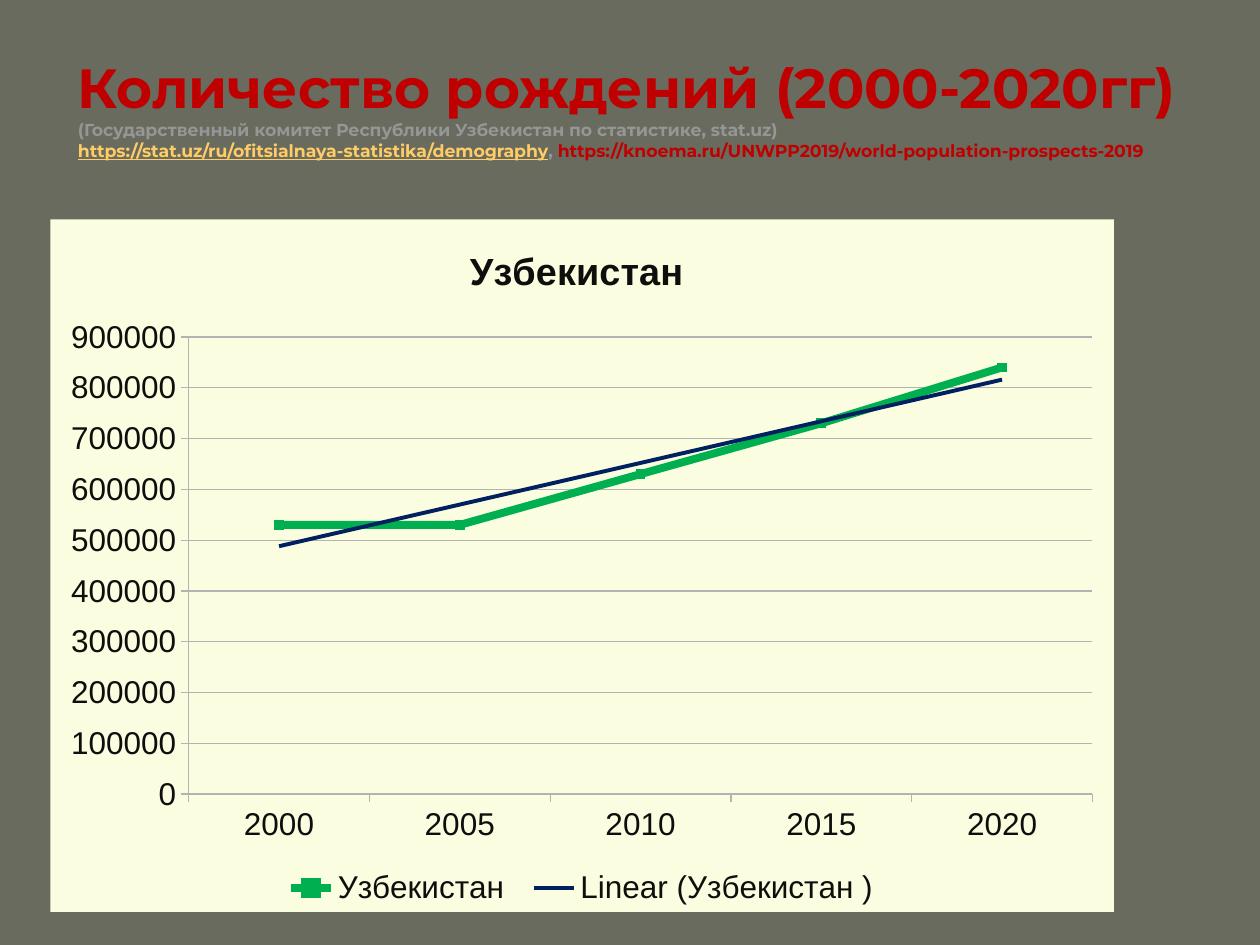
from lxml import etree
from pptx import Presentation, util as u
from pptx.chart.data import CategoryChartData
from pptx.dml.color import RGBColor
from pptx.enum import chart as ch, text
from pptx.oxml import parse_xml
from pptx.oxml.ns import nsdecls, qn

OLIVE = RGBColor(0x68, 0x6B, 0x5D)
CREAM = RGBColor(0xFA, 0xFD, 0xDF)
RED = RGBColor(0xC0, 0x00, 0x00)
GRAY = RGBColor(0x96, 0x96, 0x96)
GOLD = RGBColor(0xFF, 0xCC, 0x66)
INK = RGBColor(0x0E, 0x0E, 0x0C)
GREEN = RGBColor(0x00, 0xB0, 0x50)
NAVY = RGBColor(0x00, 0x20, 0x60)
GRID = RGBColor(0xB3, 0xB3, 0xB3)


def style(font, color, **values):
    for key, value in values.items():
        setattr(font, key, value)
    font.color.rgb = color


def fill_xml(color):
    return parse_xml(
        f'<c:spPr {nsdecls("c", "a")}><a:solidFill><a:srgbClr val="{color}"/></a:solidFill>'
        '<a:ln><a:noFill/></a:ln></c:spPr>')


deck = Presentation()
deck.slide_width, deck.slide_height = u.Inches(10), u.Inches(7.5)
W, H = deck.slide_width, deck.slide_height
slide = deck.slides.add_slide(deck.slide_layouts[6])
slide.background.fill.solid()
slide.background.fill.fore_color.rgb = OLIVE

heading = slide.shapes.add_textbox(
    int(W * 0.052), int(H * 0.024), int(W * 0.892), int(H * 0.196)).text_frame
heading.word_wrap = True
heading.vertical_anchor = text.MSO_ANCHOR.MIDDLE
heading.margin_bottom = u.Inches(0.18)
lines = [
    [("Количество рождений (2000-2020гг)", 31.5, RED, False)],
    [("(Государственный комитет Республики Узбекистан по статистике, stat.uz)", 9.9, GRAY, False)],
    [("https://stat.uz/ru/ofitsialnaya-statistika/demography", 9.9, GOLD, True),
     (", ", 9.9, GRAY, False),
     ("https://knoema.ru/UNWPP2019/world-population-prospects-2019", 9.9, RED, False)],
]
paragraph = heading.paragraphs[0]
for number, line in enumerate(lines):
    if number:
        paragraph.add_line_break()
    for words, size, color, underline in line:
        run = paragraph.add_run()
        run.text = words
        style(run.font, color, name="Montserrat", size=u.Pt(size), bold=True, underline=underline)

births = CategoryChartData()
births.categories = ["2000", "2005", "2010", "2015", "2020"]
births.add_series("Узбекистан ", [530000, 530000, 630000, 730000, 840000])
chart = slide.shapes.add_chart(
    ch.XL_CHART_TYPE.LINE_MARKERS, int(W * 0.04), int(H * 0.232),
    int(W * 0.844), int(H * 0.733), births).chart
style(chart.font, INK, name="Arial", size=u.Pt(18))

chart.has_title = True
country = chart.chart_title.text_frame
country.text = "Узбекистан "
style(country.paragraphs[0].runs[0].font, INK, name="Arial", size=u.Pt(21.6), bold=True)

chart.has_legend = True
chart.legend.position = ch.XL_LEGEND_POSITION.BOTTOM
chart.legend.include_in_layout = False
style(chart.legend.font, INK, name="Arial", size=u.Pt(18))

years, counts = chart.category_axis, chart.value_axis
counts.minimum_scale, counts.maximum_scale, counts.major_unit = 0, 900000, 100000
counts.has_major_gridlines = True
for axis in (years, counts):
    axis.major_tick_mark = ch.XL_TICK_MARK.OUTSIDE
    style(axis.tick_labels.font, INK, name="Arial", size=u.Pt(18))
for rule in (years.format.line, counts.format.line, counts.major_gridlines.format.line):
    rule.color.rgb = GRID
    rule.width = u.Pt(0.75)

trend = chart.plots[0].series[0]
trend.smooth = False
trend.format.line.color.rgb = GREEN
trend.format.line.width = u.Pt(4.5)
trend.marker.style = ch.XL_MARKER_STYLE.SQUARE
trend.marker.size = 5
trend.marker.format.fill.solid()
trend.marker.format.fill.fore_color.rgb = GREEN
trend.marker.format.line.color.rgb = GREEN
chart.plots[0].vary_by_categories = False
trend._element.find(qn("c:cat")).addprevious(parse_xml(
    f'<c:trendline {nsdecls("c", "a")}><c:spPr><a:ln w="{u.Pt(2.25)}"><a:solidFill>'
    f'<a:srgbClr val="{NAVY}"/></a:solidFill></a:ln></c:spPr><c:trendlineType val="linear"/>'
    '<c:dispRSqr val="0"/><c:dispEq val="0"/></c:trendline>'))

space = chart._chartSpace
plot_area = space.find(".//" + qn("c:plotArea"))
space.find(qn("c:chart")).addnext(fill_xml(CREAM))
plot_area.append(fill_xml(CREAM))
for old in plot_area.findall(qn("c:layout")):
    plot_area.remove(old)
layout = etree.Element(qn("c:layout"))
manual = etree.SubElement(layout, qn("c:manualLayout"))
for tag, value in {"layoutTarget": "inner", "xMode": "edge", "yMode": "edge",
                   "x": 0.13, "y": 0.17, "w": 0.85, "h": 0.66}.items():
    etree.SubElement(manual, qn("c:" + tag)).set("val", str(value))
plot_area.insert(0, layout)

deck.save("out.pptx")
